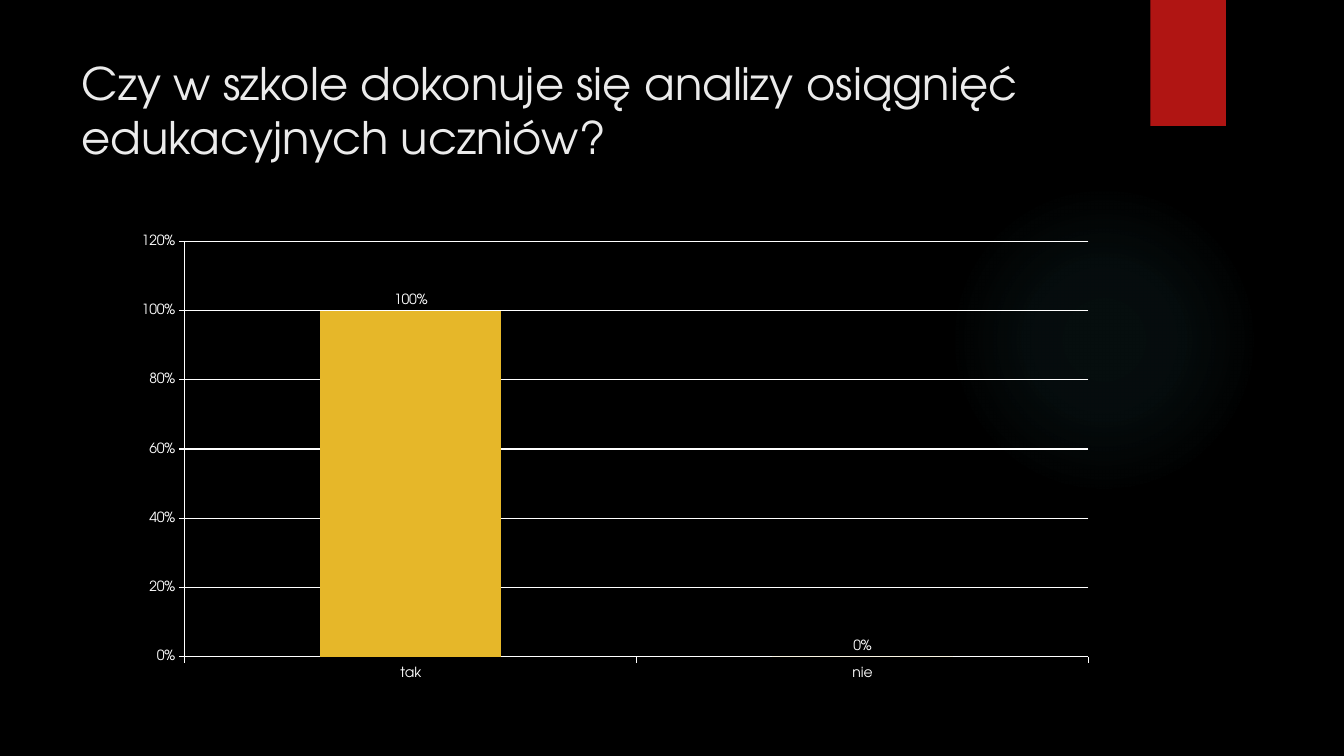
from dataclasses import dataclass

from lxml import etree
from pptx import Presentation
from pptx.chart.data import CategoryChartData
from pptx.dml.color import RGBColor
from pptx.enum.chart import XL_CHART_TYPE, XL_LABEL_POSITION, XL_TICK_MARK
from pptx.enum.shapes import MSO_SHAPE
from pptx.enum.text import MSO_ANCHOR, MSO_AUTO_SIZE
from pptx.oxml import parse_xml
from pptx.oxml.ns import nsdecls, qn
from pptx.util import Inches, Pt

OVAL, RECT = MSO_SHAPE.OVAL, MSO_SHAPE.RECTANGLE
COLUMNS = XL_CHART_TYPE.COLUMN_CLUSTERED
OUTSIDE, OUTSIDE_END = XL_TICK_MARK.OUTSIDE, XL_LABEL_POSITION.OUTSIDE_END
TOP, NO_FIT = MSO_ANCHOR.TOP, MSO_AUTO_SIZE.NONE

BLACK = RGBColor(0x00, 0x00, 0x00)
WHITE = RGBColor(0xFF, 0xFF, 0xFF)
TITLE_GREY = RGBColor(0xEB, 0xEB, 0xEB)
RED = RGBColor(0xB0, 0x15, 0x13)
GOLD = RGBColor(0xE6, 0xB7, 0x29)
TEAL = RGBColor(0x50, 0xB9, 0xC1)
FONT = "TeX Gyre Adventor"
PERCENT = "0%"


@dataclass
class Decoration:
    kind: MSO_SHAPE
    left: float
    top: float
    width: float
    height: float
    color: RGBColor
    glow: tuple[tuple[int, int], ...] = ()


DECORATIONS = [
    Decoration(OVAL, 9.41, 1.83, 3.08, 3.08, TEAL, ((0, 7), (36, 6), (69, 0))),
    Decoration(RECT, 11.41, 0, 0.75, 1.25, RED),
]


def format_font(font, *, size: float, color: RGBColor) -> None:
    font.name = FONT
    font.size = Pt(size)
    font.bold = False
    font.color.rgb = color


def write_text(tf, text: str, **fmt) -> None:
    p = tf.paragraphs[0]
    p.line_spacing = 1.0
    r = p.add_run()
    r.text = text
    format_font(r.font, **fmt)


def set_glow(sp, color: RGBColor, stops: tuple[tuple[int, int], ...]) -> None:
    grad = parse_xml(
        f'<a:gradFill {nsdecls("a")} rotWithShape="1"><a:gsLst/><a:path path="circle">'
        '<a:fillToRect l="50000" t="50000" r="50000" b="50000"/></a:path></a:gradFill>'
    )
    for position, opacity in stops:
        gs = etree.SubElement(grad[0], qn("a:gs"), pos=str(position * 1000))
        clr = etree.SubElement(gs, qn("a:srgbClr"), val=str(color))
        etree.SubElement(clr, qn("a:alpha"), val=str(opacity * 1000))
    sp_pr = sp.element.spPr
    sp_pr.replace(sp_pr.find(qn("a:solidFill")), grad)


def add_decoration(s, d: Decoration) -> None:
    sp = s.shapes.add_shape(
        d.kind, Inches(d.left), Inches(d.top), Inches(d.width), Inches(d.height)
    )
    sp.shadow.inherit = False
    sp.line.fill.background()
    sp.fill.solid()
    sp.fill.fore_color.rgb = d.color
    if d.glow:
        set_glow(sp, d.color, d.glow)


def add_title(s, text: str) -> None:
    title = s.shapes.title
    title.left, title.top = Inches(0.71), Inches(0.5)
    title.width, title.height = Inches(10.29), Inches(1.53)
    tf = title.text_frame
    tf.word_wrap = True
    tf.auto_size = NO_FIT
    tf.vertical_anchor = TOP
    p = tf.paragraphs[0]
    write_text(tf, text, size=32, color=TITLE_GREY)
    p.alignment = 1


def add_answer_chart(s) -> None:
    data = CategoryChartData(number_format=PERCENT)
    data.categories = ["tak", "nie"]
    data.add_series("Series 1", (1, 0))
    chart = s.shapes.add_chart(
        COLUMNS, Inches(1.21), Inches(2.24), Inches(9.78), Inches(4.59), data
    ).chart
    chart.has_legend = False
    chart.has_title = False
    format_font(chart.font, size=10, color=WHITE)

    values = chart.value_axis
    values.minimum_scale, values.maximum_scale, values.major_unit = 0, 1.2, 0.2
    values.has_major_gridlines = True
    values.tick_labels.number_format = PERCENT
    values.tick_labels.number_format_is_linked = False
    for axis in (chart.category_axis, values):
        axis.major_tick_mark = OUTSIDE
    for line in (
        chart.category_axis.format.line,
        values.format.line,
        values.major_gridlines.format.line,
    ):
        line.color.rgb = WHITE
        line.width = Pt(0.75)

    plot = chart.plots[0]
    plot.gap_width = 150
    plot.vary_by_categories = False
    fill = plot.series[0].format.fill
    fill.solid()
    fill.fore_color.rgb = GOLD
    plot.has_data_labels = True
    labels = plot.data_labels
    labels.show_value = True
    labels.number_format = PERCENT
    labels.number_format_is_linked = False
    labels.position = OUTSIDE_END
    format_font(labels.font, size=10, color=WHITE)


def main() -> None:
    prs = Presentation()
    prs.slide_width, prs.slide_height = Inches(13.33), Inches(7.5)
    s = prs.slides.add_slide(prs.slide_layouts[5])
    s.background.fill.solid()
    s.background.fill.fore_color.rgb = BLACK
    for decoration in DECORATIONS:
        add_decoration(s, decoration)
    add_title(s, "Czy w szkole dokonuje się analizy osiągnięć edukacyjnych uczniów?")
    add_answer_chart(s)
    prs.save("out.pptx")


if __name__ == "__main__":
    main()
